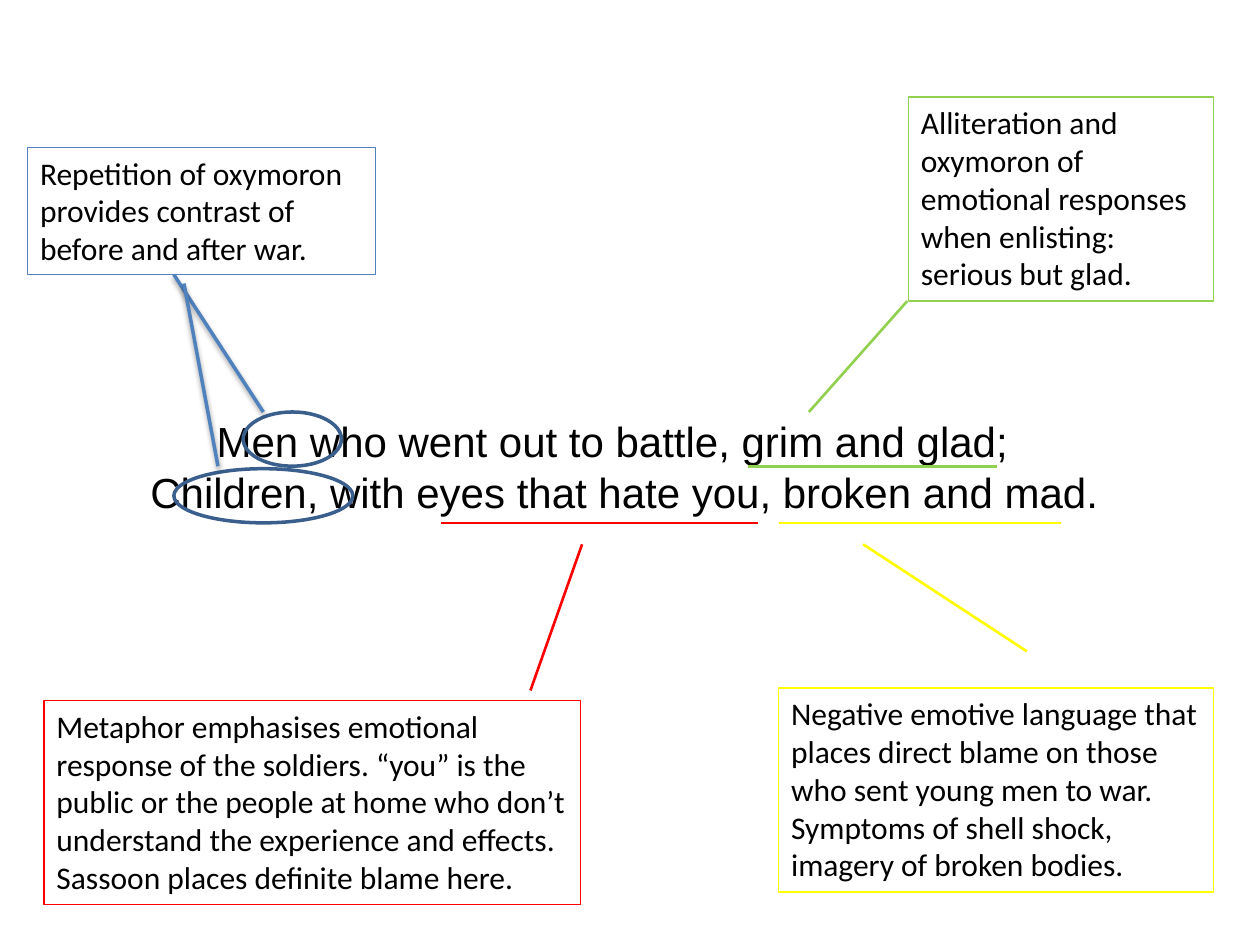
from lxml.etree import SubElement
from pptx import Presentation
from pptx.dml.color import RGBColor
from pptx.enum.shapes import MSO_CONNECTOR as Connector, MSO_SHAPE as Shape
from pptx.enum.text import PP_ALIGN as Align
from pptx.oxml.ns import qn
from pptx.util import Inches, Pt

BLUE, NAVY, GREEN, RED, YELLOW = "4F81BD", "3A5F8C", "92D050", "FF0000", "FFFF00"

VERSE = ["Men who went out to battle, grim and glad;",
         "Children, with eyes that hate you, broken and mad."]
VERSE_BOX = (0.59, 3.25, 8.82, 0.91)
VERSE_RIGHT_INSET = 0.38
SECOND_LINE_INDENT = 0.19

CIRCLED_WORDS = [(1.93, 3.27, 0.78, 0.43), (1.38, 3.72, 1.42, 0.43)]

NOTES = [
    dict(text="Repetition of oxymoron provides contrast of before and after war.",
         box=(0.22, 1.17, 2.76, 1.01), color=BLUE, width=2, shadow=True,
         lines=[(2.09, 3.27, 1.38, 2.18), (1.73, 3.7, 1.46, 2.25)]),
    dict(text="Alliteration and oxymoron of emotional responses when enlisting: "
              "serious but glad.",
         box=(7.21, 0.77, 2.42, 1.62), color=GREEN, width=1.5, shadow=False,
         lines=[(5.94, 3.7, 7.91, 3.7), (6.42, 3.27, 7.2, 2.39)]),
    dict(text="Metaphor emphasises emotional response of the soldiers. “you” is the "
              "public or the people at home who don’t understand the experience and "
              "effects. Sassoon places definite blame here.",
         box=(0.35, 5.56, 4.26, 1.62), color=RED, width=1.5, shadow=False,
         lines=[(3.5, 4.15, 6.02, 4.15), (4.62, 4.32, 4.21, 5.48)]),
    dict(text="Negative emotive language that places direct blame on those who sent "
              "young men to war. Symptoms of shell shock, imagery of broken bodies.",
         box=(6.18, 5.46, 3.45, 1.62), color=YELLOW, width=1.5, shadow=False,
         lines=[(6.18, 4.15, 8.42, 4.15), (6.85, 4.32, 8.15, 5.17)]),
]


def inches(values):
    return [Inches(value) for value in values]


def set_line(part, color, width):
    part.line.color.rgb = RGBColor.from_string(color)
    part.line.width = Pt(width)


def add_text(slide, box, paragraphs, size=18, font="Calibri", align=Align.LEFT,
             color="000000", border=None):
    text_box = slide.shapes.add_textbox(*inches(box))
    frame = text_box.text_frame
    frame.word_wrap = True
    frame.text = "\n".join(paragraphs)
    for paragraph in frame.paragraphs:
        paragraph.alignment = align
        paragraph.font.size = Pt(size)
        paragraph.font.name = font
        paragraph.font.color.rgb = RGBColor.from_string(color)
    if border:
        set_line(text_box, border, 0.75)
    return frame


def add_line(slide, ends, color, width, shadow):
    connector = slide.shapes.add_connector(Connector.STRAIGHT, *inches(ends))
    set_line(connector, color, width)
    effects = SubElement(connector._element.spPr, qn("a:effectLst"))
    if shadow:
        outer = SubElement(effects, qn("a:outerShdw"), blurRad=str(Pt(3.1)),
                           dist=str(Pt(1.6)), dir="5400000", rotWithShape="0")
        black = SubElement(outer, qn("a:srgbClr"), val="000000")
        SubElement(black, qn("a:alpha"), val="38000")


def main():
    deck = Presentation()
    deck.slide_width, deck.slide_height = Inches(10), Inches(7.5)
    slide = deck.slides.add_slide(deck.slide_layouts[6])

    verse = add_text(slide, VERSE_BOX, VERSE, size=24, font="Arial", align=Align.CENTER)
    verse.margin_right = Inches(VERSE_RIGHT_INSET)
    second_line = verse.paragraphs[1]._p.get_or_add_pPr()
    second_line.set("marL", str(Inches(SECOND_LINE_INDENT)))
    second_line.set("indent", "0")

    for box in CIRCLED_WORDS:
        circle = slide.shapes.add_shape(Shape.OVAL, *inches(box))
        circle.shadow.inherit = False
        circle.fill.background()
        set_line(circle, NAVY, 2)

    for note in NOTES:
        for ends in note["lines"]:
            add_line(slide, ends, note["color"], note["width"], note["shadow"])
        add_text(slide, note["box"], [note["text"]], border=note["color"])

    deck.save("out.pptx")


if __name__ == "__main__":
    main()
